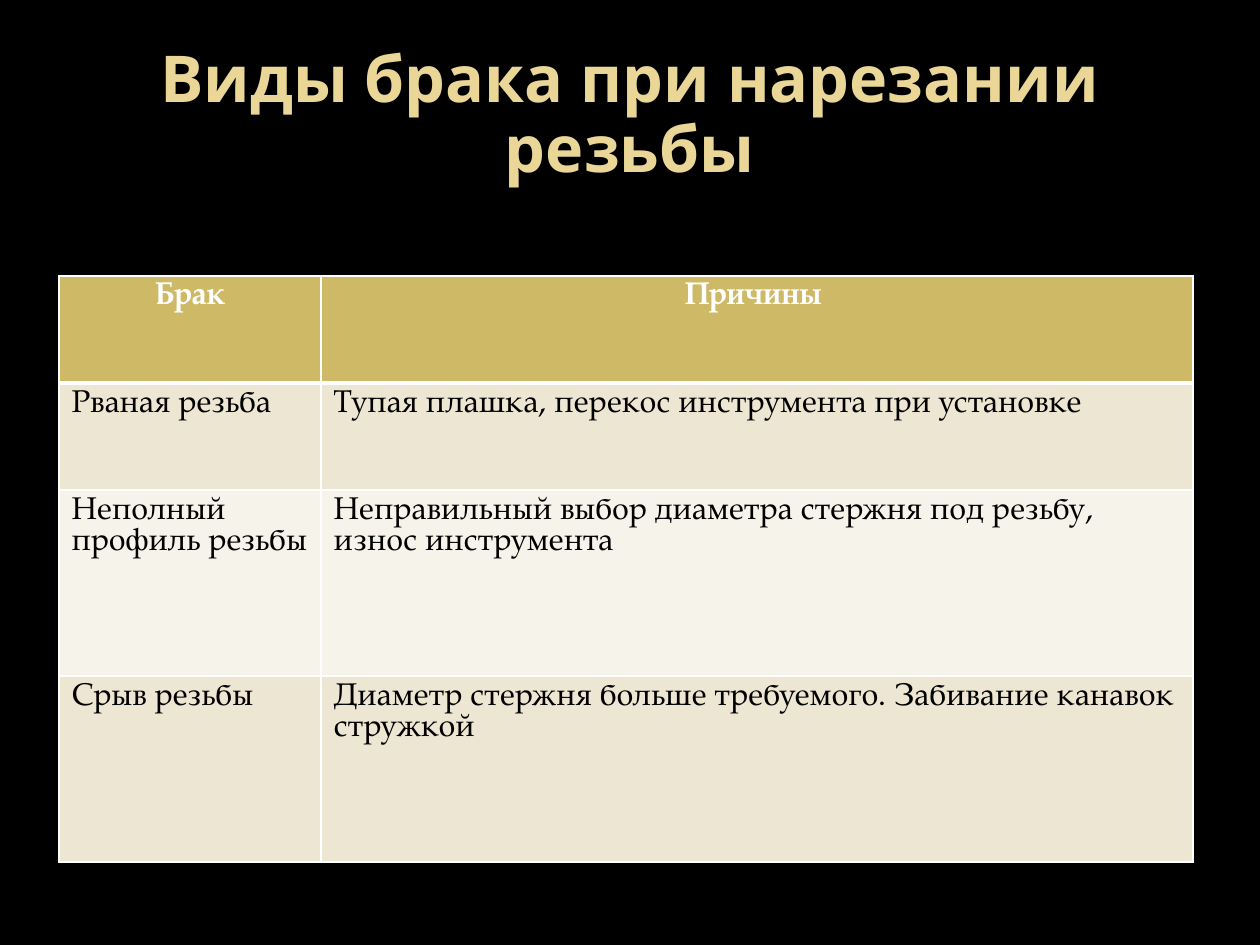
from dataclasses import dataclass

from lxml import etree
from pptx import Presentation
from pptx import util as u
from pptx.dml.color import RGBColor
from pptx.enum import text
from pptx.oxml import ns

PX = 914400 / 126


@dataclass(frozen=True)
class Theme:
    background: str = "000000"
    title: str = "EAD696"
    header: str = "CEB966"
    header_text: str = "FFFFFF"
    bands: tuple = ("EDE6D3", "F6F3EA")
    body_text: str = "000000"
    border: str = "FFFFFF"
    title_font: str = "Noto Sans"
    body_font: str = "TeX Gyre Pagella"
    title_size: float = 36.9
    body_size: float = 18
    thin: int = 1
    thick: int = 3


THEME = Theme()
DEFECTS = [
    ("Брак", "Причины "),
    ("Рваная резьба", "Тупая плашка, перекос инструмента при установке"),
    ("Неполный профиль резьбы",
     "Неправильный выбор диаметра стержня под резьбу, износ инструмента"),
    ("Срыв резьбы",
     "Диаметр стержня больше требуемого. Забивание канавок стружкой"),
]


def px(n):
    return u.Emu(round(n * PX))


def rgb(value):
    return RGBColor.from_string(value)


def add_text(p, content, font, size, color, bold):
    r = p.add_run()
    r.text = content
    r.font.name = font
    r.font.size = u.Pt(size)
    r.font.bold = bold
    r.font.color.rgb = rgb(color)


def set_border(cell, side, width):
    ln = etree.SubElement(cell._tc.get_or_add_tcPr(), ns.qn(f"a:ln{side}"),
                          w=str(u.Pt(width)))
    fill = etree.SubElement(ln, ns.qn("a:solidFill"))
    etree.SubElement(fill, ns.qn("a:srgbClr"), val=THEME.border)


def place_title(slide, box, content):
    sp = slide.shapes.title
    sp.left, sp.top, sp.width, sp.height = map(px, box)
    tf = sp.text_frame
    tf.word_wrap = True
    tf.auto_size = text.MSO_AUTO_SIZE.NONE
    tf.vertical_anchor = text.MSO_ANCHOR.MIDDLE
    p = tf.paragraphs[0]
    p.alignment = text.PP_ALIGN.CENTER
    p.line_spacing = 0.9
    add_text(p, content, THEME.title_font, THEME.title_size, THEME.title, True)


def format_cell(cell, content, row):
    header = row == 0
    for side in "LRTB":
        heavy = (side == "B" and header) or (side == "T" and row == 1)
        set_border(cell, side, THEME.thick if heavy else THEME.thin)
    cell.fill.solid()
    cell.fill.fore_color.rgb = rgb(
        THEME.header if header else THEME.bands[(row - 1) % 2])
    p = cell.text_frame.paragraphs[0]
    p.alignment = text.PP_ALIGN.CENTER if header else text.PP_ALIGN.LEFT
    add_text(p, content, THEME.body_font, THEME.body_size,
             THEME.header_text if header else THEME.body_text, header)


def place_table(slide, box, rows, col_widths, row_heights):
    table = slide.shapes.add_table(
        len(rows), len(col_widths), *map(px, box)).table
    for column, width in zip(table.columns, col_widths):
        column.width = px(width)
    for i, (row, height) in enumerate(zip(table.rows, row_heights)):
        row.height = px(height)
        for cell, content in zip(row.cells, rows[i]):
            format_cell(cell, content, i)


def main():
    prs = Presentation()
    prs.slide_width, prs.slide_height = px(1260), px(945)
    slide = prs.slides.add_slide(prs.slide_layouts[5])
    slide.background.fill.solid()
    slide.background.fill.fore_color.rgb = rgb(THEME.background)
    place_title(slide, (63, 38, 1134, 157), "Виды брака при нарезании резьбы")
    place_table(slide, (59, 276, 1134, 586), DEFECTS,
                (262, 872), (107, 107, 186, 186))
    prs.save("out.pptx")


if __name__ == "__main__":
    main()
